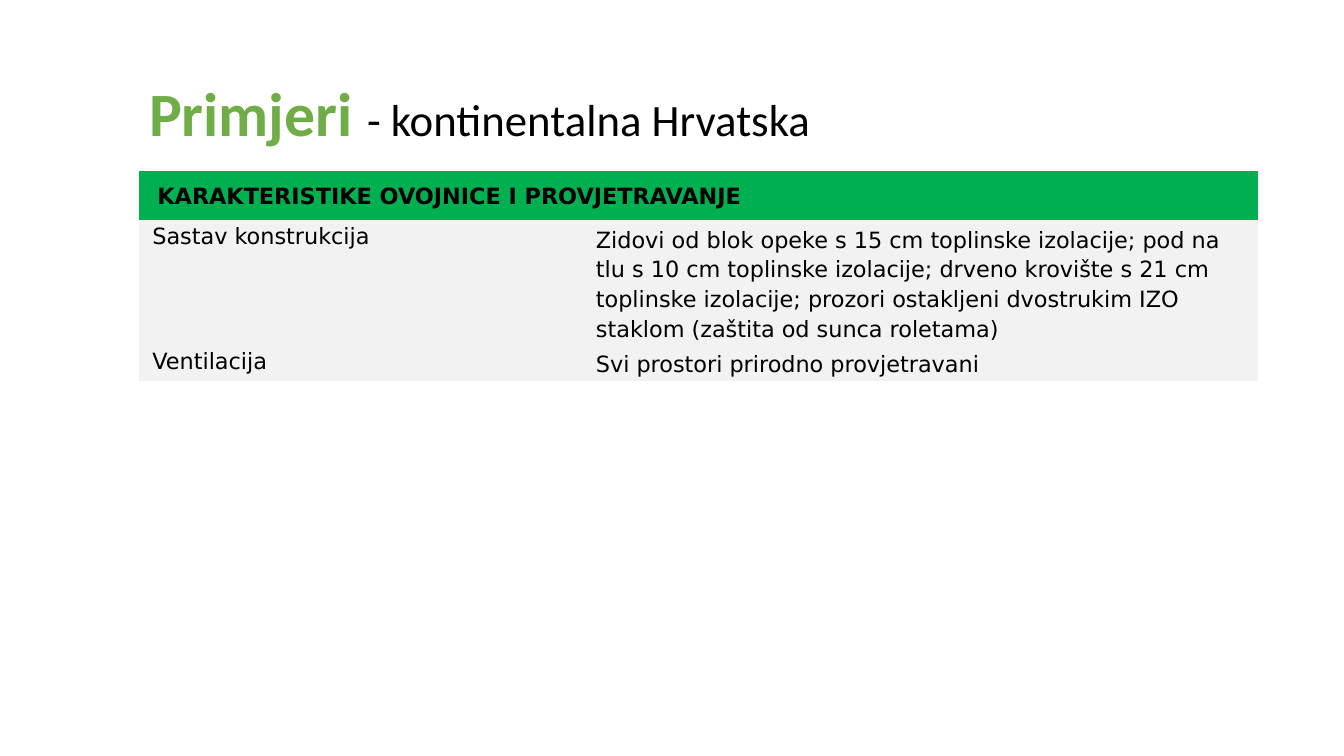
from dataclasses import dataclass

from pptx import Presentation
from pptx.dml.color import RGBColor as Rgb
from pptx.enum.text import MSO_ANCHOR as Anchor
from pptx.oxml.ns import qn
from pptx.util import Pt


@dataclass(frozen=True)
class Theme:
    lime: str = "70AD47"
    green: str = "00B050"
    grey: str = "F2F2F2"
    ink: str = "000000"
    head: str = "Calibri"
    body: str = "DejaVu Sans"
    big: int = 44
    mid: int = 32
    small: int = 16


THEME = Theme()
PLAIN = "{2D5ABB26-0587-4C30-8999-92F81FD0307C}"  # no style, no grid

HEADER = "KARAKTERISTIKE OVOJNICE I PROVJETRAVANJE"
ROWS = [
    ("Sastav konstrukcija",
     "Zidovi od blok opeke s 15 cm toplinske izolacije; pod na tlu s 10 cm "
     "toplinske izolacije; drveno krovište s 21 cm toplinske izolacije; "
     "prozori ostakljeni dvostrukim IZO staklom (zaštita od sunca roletama)"),
    ("Ventilacija", "Svi prostori prirodno provjetravani"),
]


def apply(item, values):
    for name, value in values.items():
        setattr(item, name, value)


def add_run(para, text, name, size, color, bold=False):
    run = para.add_run()
    run.text = text
    apply(run.font, {"name": name, "size": Pt(size), "bold": bold})
    run.font.color.rgb = Rgb.from_string(color)


def add_title(slide, lead, rest):
    box = slide.shapes.add_textbox(Pt(99.5), Pt(50), Pt(805.5), Pt(61))
    frame = box.text_frame
    frame.word_wrap = True
    para = frame.paragraphs[0]
    add_run(para, lead, THEME.head, THEME.big, THEME.lime, True)
    add_run(para, rest, THEME.head, THEME.mid, THEME.ink)


def fill_cell(cell, text, fill, side, edge, anchor=Anchor.TOP, bold=False):
    apply(cell, {
        "margin_left": Pt(side), "margin_right": Pt(side),
        "margin_top": Pt(edge), "margin_bottom": Pt(edge),
        "vertical_anchor": anchor,
    })
    cell.fill.solid()
    cell.fill.fore_color.rgb = Rgb.from_string(fill)
    para = cell.text_frame.paragraphs[0]
    apply(para, {"line_spacing": 1.15, "space_after": Pt(10)})
    add_run(para, text, THEME.body, THEME.small, THEME.ink, bold)


def add_grid(slide, header, rows, widths, heights):
    frame = slide.shapes.add_table(
        len(heights), len(widths), Pt(99.5), Pt(122.4),
        Pt(sum(widths)), Pt(sum(heights)))
    table = frame.table
    table._tbl.tblPr.find(qn("a:tableStyleId")).text = PLAIN
    for col, width in zip(table.columns, widths):
        col.width = Pt(width)
    for row, height in zip(table.rows, heights):
        row.height = Pt(height)

    # Header across all columns
    top = table.cell(0, 0)
    top.merge(table.cell(0, len(widths) - 1))
    fill_cell(top, header, THEME.green, 13, 6.5, bold=True)

    # Label and description in each row
    for i, texts in enumerate(rows, 1):
        for j, (text, anchor) in enumerate(zip(texts, (Anchor.TOP, Anchor.MIDDLE))):
            fill_cell(table.cell(i, j), text, THEME.grey, 9.4, 0, anchor)


def main():
    deck = Presentation()
    apply(deck, {"slide_width": Pt(960), "slide_height": Pt(540)})
    slide = deck.slides.add_slide(deck.slide_layouts[6])
    add_title(slide, "Primjeri ", "- kontinentalna Hrvatska")
    add_grid(slide, HEADER, ROWS, (316.8, 482.4), (25.2, 89.3, 25.2))
    deck.save("out.pptx")


if __name__ == "__main__":
    main()
